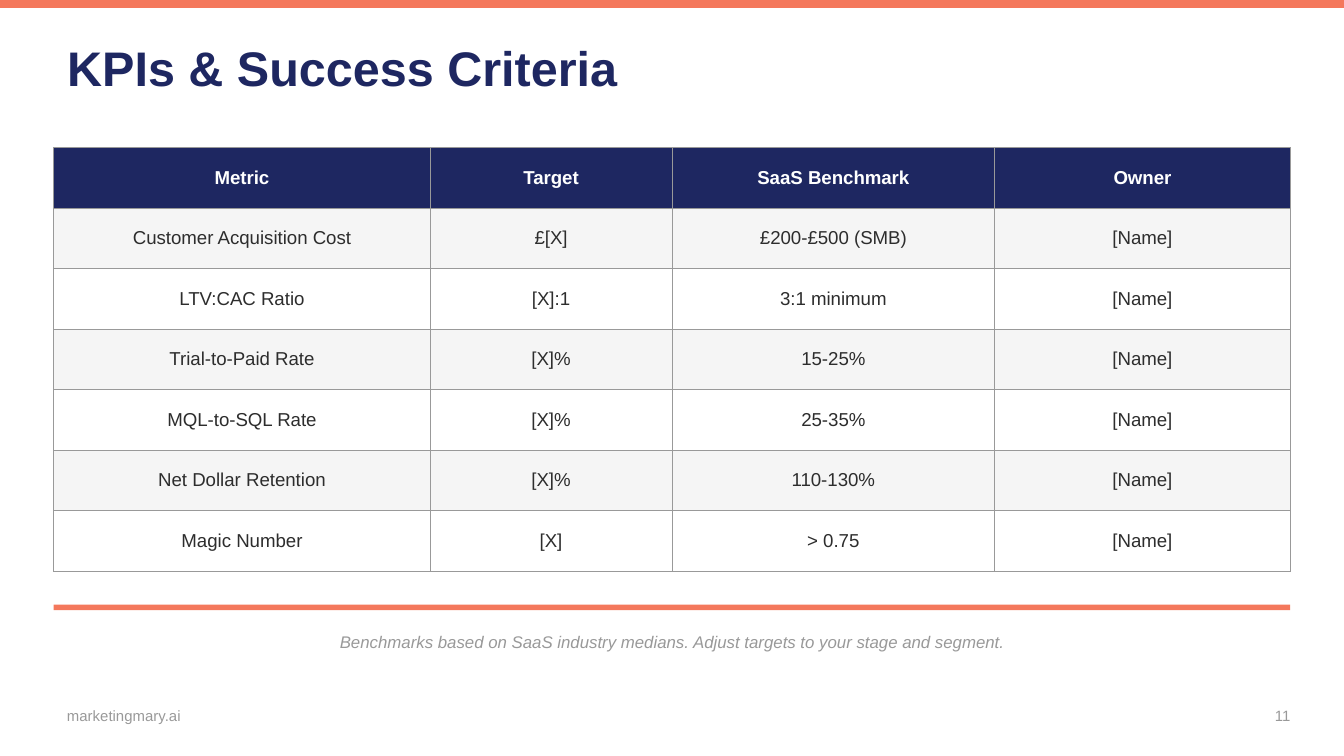
import pptx
import pptx.dml.color
import pptx.enum.shapes
import pptx.enum.text
import pptx.oxml
import pptx.oxml.ns
import pptx.util
from dataclasses import dataclass
from typing import Any

# Grid: a 16:9 slide, 100 columns wide, with rows of the same size
WIDTH = pptx.util.Inches(10)
HEIGHT = WIDTH * 9 // 16
UNIT = WIDTH // 100

NAVY, CORAL, GREY = "1E2761", "F4785C", "999999"
INK, PALE, WHITE = "2D2D2D", "F5F5F5", "FFFFFF"
ALIGN = pptx.enum.text.PP_ALIGN
MIDDLE = pptx.enum.text.MSO_ANCHOR.MIDDLE


@dataclass(frozen=True)
class Box:
    col: float
    row: float
    cols: float
    rows: float

    def place(self) -> tuple[int, ...]:
        return tuple(round(n * UNIT) for n in (self.col, self.row, self.cols, self.rows))


@dataclass(frozen=True)
class Label:
    text: str
    box: Box
    size: float
    align: Any = ALIGN.LEFT
    italic: bool = False


def paint(code: str) -> pptx.dml.color.RGBColor:
    return pptx.dml.color.RGBColor.from_string(code)


def write(frame: Any, text: str, *, size: float, color: str, bold: bool = False,
          italic: bool = False, align: Any = ALIGN.LEFT) -> None:
    para = frame.paragraphs[0]
    para.alignment = align
    run = para.add_run()
    run.text = text
    font = run.font
    font.name, font.size = "Arial", pptx.util.Pt(size)
    font.bold, font.italic = bold, italic
    font.color.rgb = paint(color)


def draw_bar(slide: Any, box: Box) -> None:
    bar = slide.shapes.add_shape(pptx.enum.shapes.MSO_SHAPE.RECTANGLE, *box.place())
    bar.shadow.inherit = False
    bar.fill.solid()
    bar.fill.fore_color.rgb = paint(CORAL)
    bar.line.fill.background()


def draw_title(slide: Any, text: str, box: Box) -> None:
    title = slide.shapes.title
    title.left, title.top, title.width, title.height = box.place()
    frame = title.text_frame
    frame.auto_size = pptx.enum.text.MSO_AUTO_SIZE.NONE
    frame.margin_left = frame.margin_right = frame.margin_top = frame.margin_bottom = 0
    frame.vertical_anchor = MIDDLE
    write(frame, text, size=26, color=NAVY, bold=True)


def draw_label(slide: Any, label: Label) -> None:
    frame = slide.shapes.add_textbox(*label.box.place()).text_frame
    frame.word_wrap = True
    frame.vertical_anchor = MIDDLE
    write(frame, label.text, size=label.size, color=GREY,
          italic=label.italic, align=label.align)


def add_edges(cell: Any) -> None:
    props = cell._tc.get_or_add_tcPr()
    for spot, side in enumerate(("lnL", "lnR", "lnT", "lnB")):
        props.insert(spot, pptx.oxml.parse_xml(
            f'<a:{side} {pptx.oxml.ns.nsdecls("a")} w="{pptx.util.Pt(0.5)}">'
            f'<a:solidFill><a:srgbClr val="{GREY}"/></a:solidFill></a:{side}>'))


def draw_table(slide: Any, data: list, box: Box, widths: tuple) -> None:
    table = slide.shapes.add_table(len(data), len(widths), *box.place()).table
    table.horz_banding = False
    for col, width in zip(table.columns, widths):
        col.width = width * UNIT
    for i, texts in enumerate(data):
        table.rows[i].height = round(box.rows * UNIT / len(data))
        head = i == 0
        for j, text in enumerate(texts):
            cell = table.cell(i, j)
            cell.vertical_anchor = MIDDLE
            if head or i % 2:
                cell.fill.solid()
                cell.fill.fore_color.rgb = paint(NAVY if head else PALE)
            else:
                cell.fill.background()
            add_edges(cell)
            write(cell.text_frame, text, size=10, color=WHITE if head else INK,
                  bold=head, align=ALIGN.CENTER)


METRICS = [
    ("Customer Acquisition Cost", "£[X]", "£200-£500 (SMB)"),
    ("LTV:CAC Ratio", "[X]:1", "3:1 minimum"),
    ("Trial-to-Paid Rate", "[X]%", "15-25%"),
    ("MQL-to-SQL Rate", "[X]%", "25-35%"),
    ("Net Dollar Retention", "[X]%", "110-130%"),
    ("Magic Number", "[X]", "> 0.75"),
]
LABELS = [
    Label("Benchmarks based on SaaS industry medians. "
          "Adjust targets to your stage and segment.",
          Box(4, 46, 92, 3.5), 9, ALIGN.CENTER, True),
    Label("marketingmary.ai", Box(4, 51.5, 20, 3.5), 8),
    Label("11", Box(92, 51.5, 5, 3.5), 8, ALIGN.RIGHT),
]


def main() -> None:
    deck = pptx.Presentation()
    deck.slide_width, deck.slide_height = WIDTH, HEIGHT
    slide = deck.slides.add_slide(deck.slide_layouts[5])

    # Top band and title
    draw_bar(slide, Box(0, 0, 100, 0.6))
    draw_title(slide, "KPIs & Success Criteria", Box(5, 2, 90, 6))

    # Table of targets
    data = [("Metric", "Target", "SaaS Benchmark", "Owner")]
    data += [(*row, "[Name]") for row in METRICS]
    draw_table(slide, data, Box(4, 11, 92, 31.5), (28, 18, 24, 22))

    # Rule, note and footer
    draw_bar(slide, Box(4, 45, 92, 0.4))
    for label in LABELS:
        draw_label(slide, label)

    deck.save("out.pptx")


if __name__ == "__main__":
    main()
